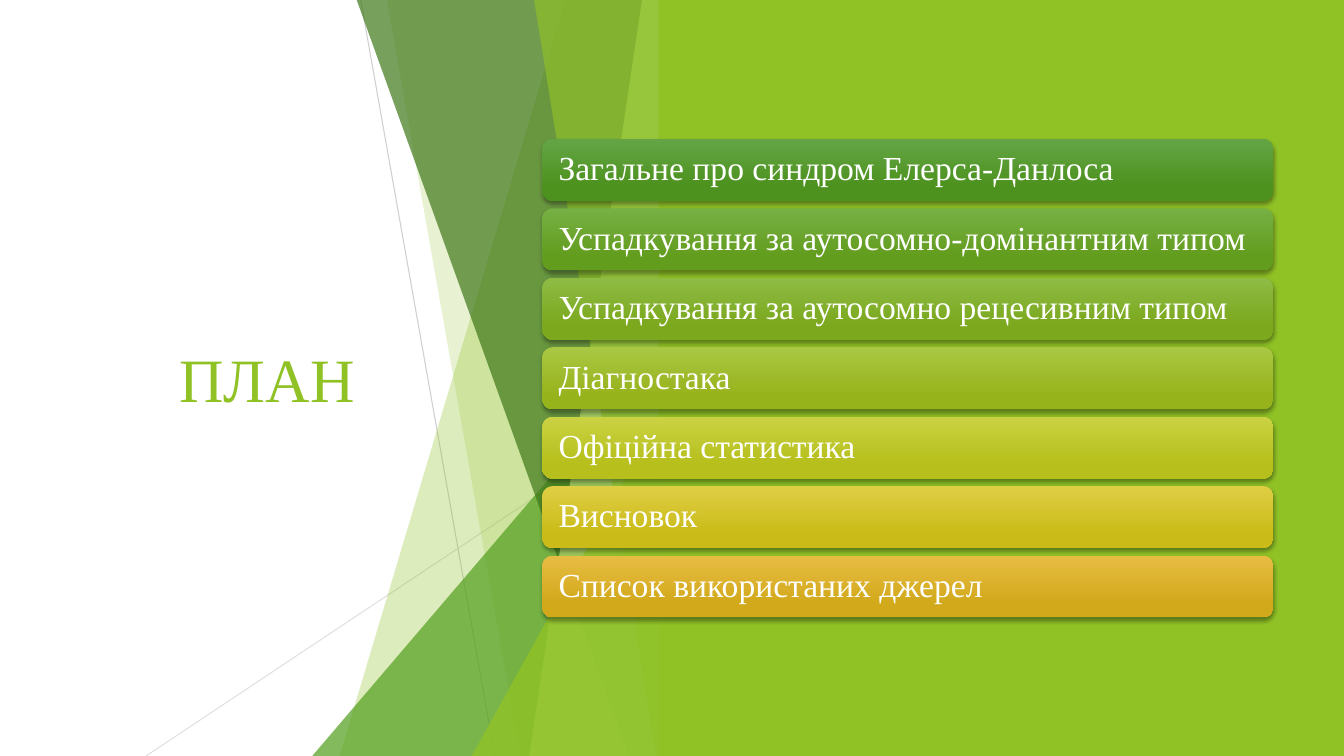
from lxml.etree import SubElement
from pptx import Presentation
from pptx.dml.color import RGBColor
from pptx.enum.shapes import MSO_CONNECTOR, MSO_SHAPE
from pptx.enum.text import MSO_ANCHOR, PP_ALIGN
from pptx.oxml.ns import qn
from pptx.util import Cm, Pt

# Content: each plan item with the top and bottom colour of its bar
TITLE = "ПЛАН"
PLAN = [
    ("Загальне про синдром Елерса-Данлоса", "63A545", "4D921E"),
    ("Успадкування за аутосомно-домінантним типом", "77B044", "629D1E"),
    ("Успадкування за аутосомно рецесивним типом", "8EBB44", "7BA81D"),
    ("Діагностака", "AAC744", "97B31C"),
    ("Офіційна статистика", "CAD243", "B6BF1B"),
    ("Висновок", "DFCE43", "CABB19"),
    ("Список використаних джерел", "E7BC43", "D2A91B"),
]
FONT = "Times New Roman"
COLORS = {"lime": "90C226", "green": "54A021", "forest": "3F7819",
          "pale": "C0E474", "gray": "BFBFBF", "silver": "D9D9D9",
          "white": "FFFFFF", "black": "000000"}

# Geometry in centimetres
WIDTH, HEIGHT = 33.87, 19.05
FACET_RIGHT = 16.92
PANEL_LEFT = 16.6
BAR_LEFT, BAR_TOP, BAR_WIDTH, BAR_HEIGHT, BAR_STEP = 13.67, 3.5, 18.42, 1.56, 1.75

# Thin lines: start, end, colour, opacity
LINES = [((9.09, 0), (12.47, HEIGHT), "gray", 75),
         ((FACET_RIGHT, 10.24), (3.68, HEIGHT), "silver", 80)]
# Facets, back to front: kind, left edge, colour, opacity
# "band" has its left edge at x top and x bottom, "corner" at x bottom and y top
FACETS = [
    ("band", (14.25, 8.56), "lime", 30),
    ("band", (9.75, 13.11), "lime", 20),
    ("corner", (7.87, 8.46), "green", 72),
    ("band", (8.99, 15.85), "forest", 70),
    ("band", (16.18, 13.34), "pale", 70),
    ("band", (13.46, 16.54), "lime", 65),
    ("corner", (11.89, 9.98), "lime", 80),
]


def rgb(name):
    return RGBColor.from_string(COLORS.get(name, name))


def set_opacity(shape, percent):
    color = next(shape._element.spPr.iter(qn("a:srgbClr")))
    SubElement(color, qn("a:alpha"), val=str(percent * 1000))


def clear_style(shape):
    shape.shadow.inherit = False
    shape.line.fill.background()


def paint(shape, color):
    clear_style(shape)
    shape.fill.solid()
    shape.fill.fore_color.rgb = rgb(color)


def write(frame, text, size, color, align):
    frame.word_wrap = True
    frame.vertical_anchor = MSO_ANCHOR.MIDDLE
    para = frame.paragraphs[0]
    para.alignment = align
    span = para.add_run()
    span.text = text
    span.font.name = FONT
    span.font.size = Pt(size)
    span.font.color.rgb = rgb(color)
    return para


def add_line(page, start, end, color, opacity):
    line = page.shapes.add_connector(
        MSO_CONNECTOR.STRAIGHT, *(Cm(value) for value in start + end))
    line.line.color.rgb = rgb(color)
    line.line.width = Pt(0.75)
    set_opacity(line, opacity)
    SubElement(line._element.spPr, qn("a:effectLst"))


def add_facet(page, kind, edge, color, opacity):
    if kind == "band":
        top_x, bottom_x = edge
        builder = page.shapes.build_freeform(Cm(top_x), 0, scale=1.0)
        corners = [(FACET_RIGHT, 0), (FACET_RIGHT, HEIGHT), (bottom_x, HEIGHT)]
        builder.add_line_segments([(Cm(x), Cm(y)) for x, y in corners], close=True)
        facet = builder.convert_to_shape()
    else:
        left, top = edge
        facet = page.shapes.add_shape(
            MSO_SHAPE.ISOSCELES_TRIANGLE, Cm(left), Cm(top),
            Cm(FACET_RIGHT - left), Cm(HEIGHT - top))
        facet.adjustments[0] = 1
    paint(facet, color)
    set_opacity(facet, opacity)


def add_bar(page, index, text, light, dark):
    bar = page.shapes.add_shape(
        MSO_SHAPE.ROUNDED_RECTANGLE, Cm(BAR_LEFT), Cm(BAR_TOP + index * BAR_STEP),
        Cm(BAR_WIDTH), Cm(BAR_HEIGHT))
    clear_style(bar)
    # Vertical gradient
    bar.fill.gradient()
    bar.fill.gradient_angle = 270
    for stop, color, position in zip(bar.fill.gradient_stops, (light, dark), (0, 0.78)):
        stop.color.rgb = rgb(color)
        stop.position = position
    # Soft shadow below
    effects = bar._element.spPr.find(qn("a:effectLst"))
    shadow = SubElement(effects, qn("a:outerShdw"), blurRad=str(Pt(3)),
                        dist=str(Pt(2)), dir="5400000", rotWithShape="0")
    color = SubElement(shadow, qn("a:srgbClr"), val=COLORS["black"])
    SubElement(color, qn("a:alpha"), val="35000")
    # Label
    frame = bar.text_frame
    frame.margin_left = frame.margin_right = Cm(0.33)
    para = write(frame, text, 24, "white", PP_ALIGN.LEFT)
    para.line_spacing = 0.9


def main():
    deck = Presentation()
    deck.slide_width, deck.slide_height = Cm(WIDTH), Cm(HEIGHT)
    page = deck.slides.add_slide(deck.slide_layouts[5])

    # Title
    title = page.shapes.title
    title.left, title.top, title.width, title.height = Cm(1.8), Cm(3.84), Cm(9.86), Cm(11.38)
    write(title.text_frame, TITLE, 44, "lime", PP_ALIGN.CENTER)

    # Faceted background and right panel
    for line in LINES:
        add_line(page, *line)
    for facet in FACETS:
        add_facet(page, *facet)
    panel = page.shapes.add_shape(MSO_SHAPE.RECTANGLE, Cm(PANEL_LEFT), 0,
                                  Cm(WIDTH - PANEL_LEFT), Cm(HEIGHT))
    paint(panel, "lime")

    # Plan bars
    for index, item in enumerate(PLAN):
        add_bar(page, index, *item)

    deck.save("out.pptx")


if __name__ == "__main__":
    main()
